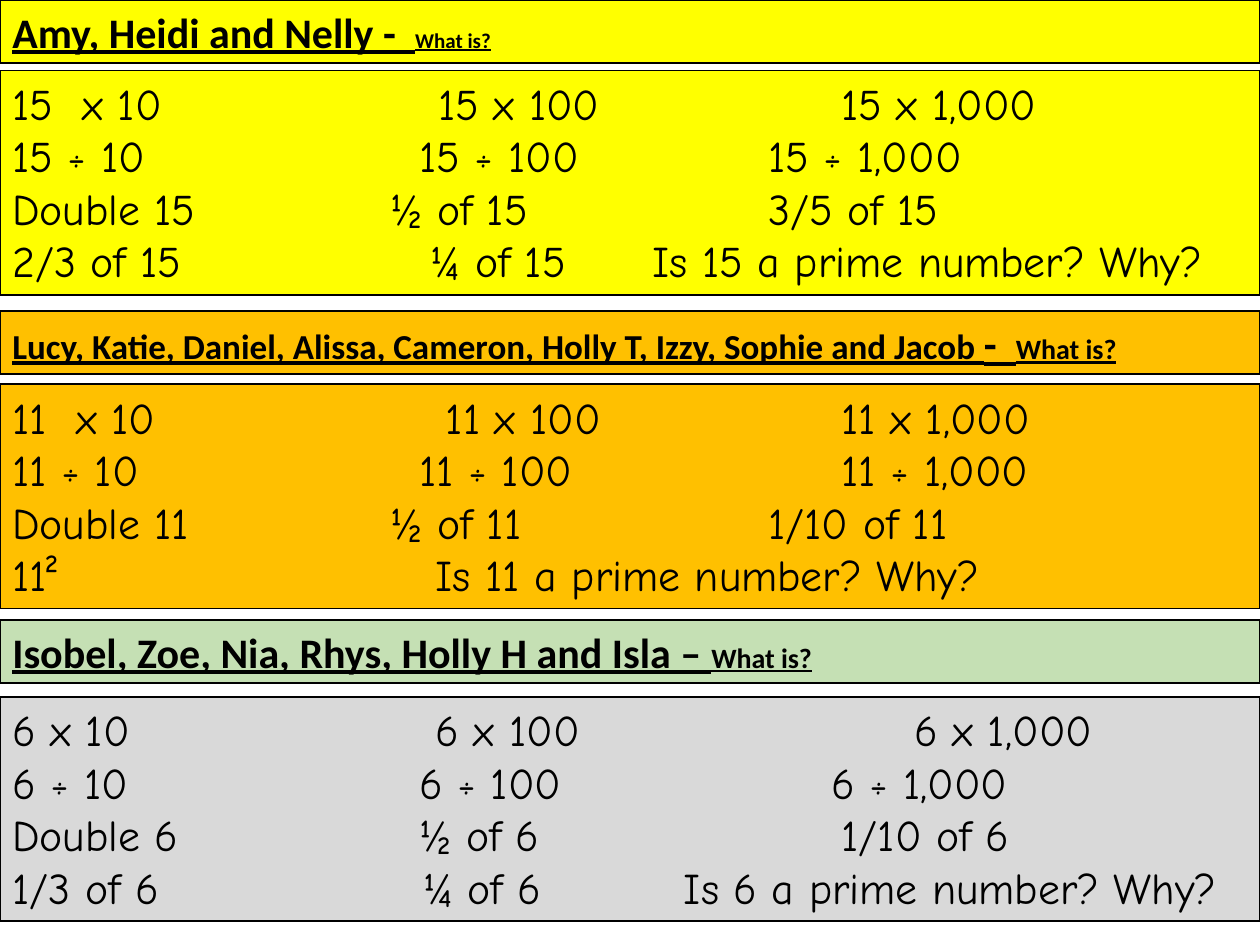
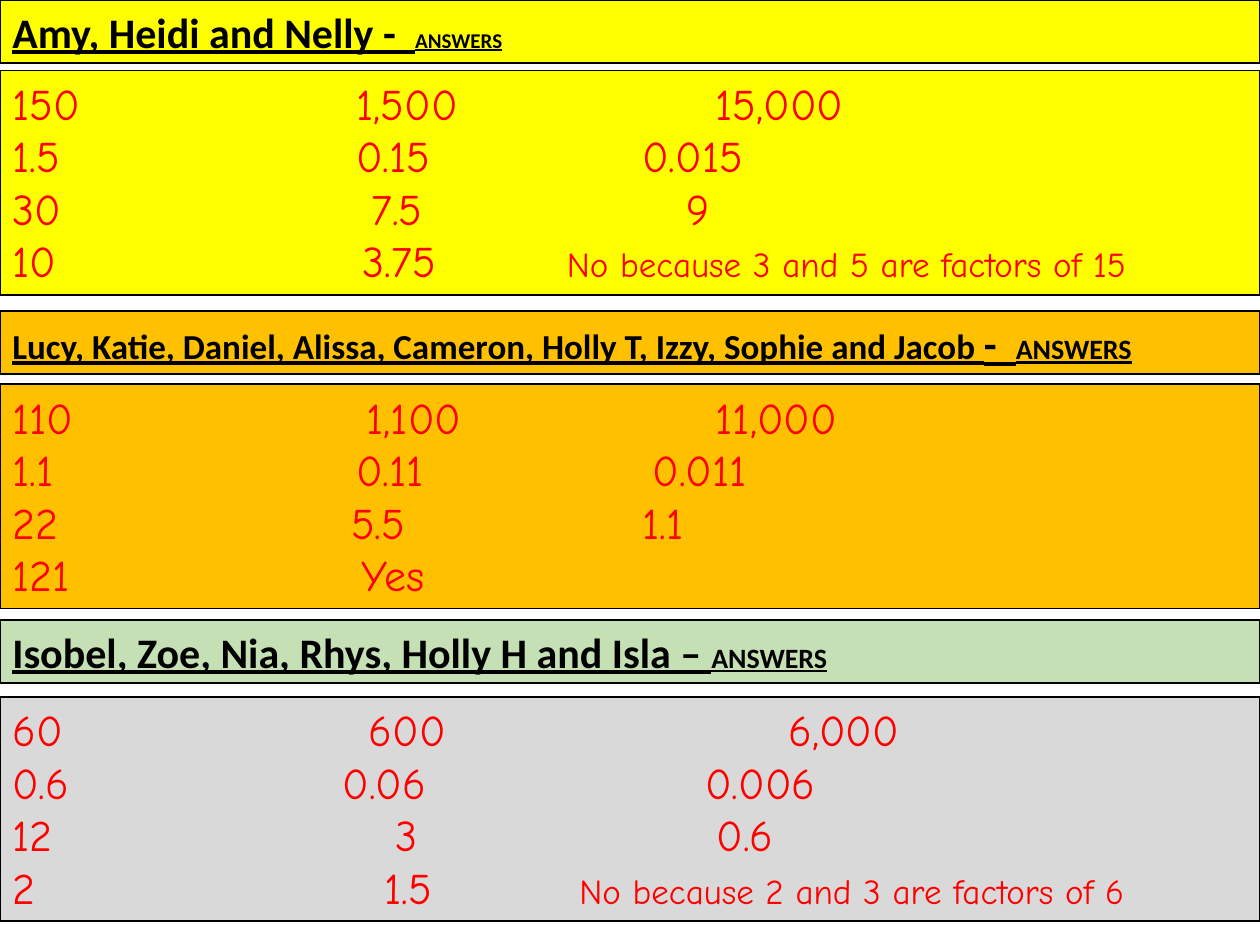
from lxml.etree import SubElement
from pptx import Presentation
from pptx.dml.color import RGBColor
from pptx.enum.shapes import MSO_SHAPE as Shape
from pptx.enum.text import MSO_ANCHOR as Anchor, MSO_AUTO_SIZE as AutoSize, PP_ALIGN as Align
from pptx.oxml.ns import qn
from pptx.util import Inches, Pt

BLACK, RED = "000000", "FF0000"
YELLOW, ORANGE, GREEN, GREY = "FFFF00", "FFC000", "C5E0B4", "D9D9D9"
HEAD_FONT, BODY_FONT = "Calibri", "Comic Neue"
BODY_SIZE, NOTE_SIZE = 25, 20
HEAD_H, BODY_H = 0.5, 1.78

# Each group: heading top, heading fill, heading runs, size of the label, body top, body fill
GROUPS = [
    (0, YELLOW, [("Amy, Heidi and Nelly -  ", 24)], 12, 0.56, YELLOW),
    (2.47, ORANGE,
     [("Lucy, Katie, Daniel, Alissa, Cameron, Holly T, Izzy, Sophie and Jacob ", 20), ("-  ", 24)],
     16, 3.05, ORANGE),
    (4.92, GREEN, [("Isobel, Zoe, Nia, Rhys, Holly H and Isla – ", 24)], 16, 5.53, GREY),
]

# Each row: its first entry, then (tab stop, entry[, size])
QUESTIONS = [
    [
        ["15  x 10", (3.38, "15 x 100"), (6.58, "15 x 1,000")],
        ["15 ÷ 10", (3.23, "15 ÷ 100"), (6, "15 ÷ 1,000")],
        ["Double 15", (3, "½ of 15"), (6, "3/5 of 15")],
        ["2/3 of 15", (3.32, "¼ of 15"), (5.08, "Is 15 a prime number? Why?")],
    ],
    [
        ["11  x 10", (3.44, "11 x 100"), (6.58, "11 x 1,000")],
        ["11 ÷ 10", (3.23, "11 ÷ 100"), (6.58, "11 ÷ 1,000")],
        ["Double 11", (3, "½ of 11"), (6, "1/10 of 11")],
        ["11²", (3.36, "Is 11 a prime number? Why?")],
    ],
    [
        ["6 x 10", (3.36, "6 x 100"), (7.16, "6 x 1,000")],
        ["6 ÷ 10", (3.23, "6 ÷ 100"), (6.5, "6 ÷ 1,000")],
        ["Double 6", (3.23, "½ of 6"), (6.58, "1/10 of 6")],
        ["1/3 of 6", (3.26, "¼ of 6"), (5.33, "Is 6 a prime number? Why?")],
    ],
]
ANSWERS = [
    [
        ["150", (2.73, "1,500"), (5.58, "15,000")],
        ["1.5", (2.73, "0.15"), (5, "0.015")],
        ["30", (2.85, "7.5"), (5.35, "9")],
        ["10", (2.78, "3.75"), (4.4, "No because 3 and 5 are factors of 15", NOTE_SIZE)],
    ],
    [
        ["110", (2.81, "1,100"), (5.58, "11,000")],
        ["1.1", (2.73, "0.11"), (5.08, "0.011")],
        ["22", (2.69, "5.5"), (5, "1.1")],
        ["121", (2.77, "Yes")],
    ],
    [
        ["60", (2.83, "600"), (6.16, "6,000")],
        ["0.6", (2.62, "0.06"), (5.5, "0.006")],
        ["12", (3.04, "3"), (5.59, "0.6")],
        ["2", (2.95, "1.5"), (4.5, "No because 2 and 3 are factors of 6", NOTE_SIZE)],
    ],
]
SLIDES = [("What is?", QUESTIONS, BLACK), ("ANSWERS", ANSWERS, RED)]


def rgb(color):
    return RGBColor.from_string(color)


class Worksheet:
    """Holds the presentation, the current slide and the shared style."""

    def __init__(self):
        self.prs = Presentation()
        self.prs.slide_width, self.prs.slide_height = Inches(10), Inches(7.5)

    def new_slide(self):
        self.s = self.prs.slides.add_slide(self.prs.slide_layouts[6])

    def band(self, top, height, fill):
        """Adds a full-width outlined box and returns its text frame."""
        sp = self.s.shapes.add_shape(
            Shape.RECTANGLE, 0, Inches(top), self.prs.slide_width, Inches(height))
        sp.shadow.inherit = False
        sp.fill.solid()
        sp.fill.fore_color.rgb = rgb(fill)
        sp.line.color.rgb = rgb(BLACK)
        sp.line.width = Pt(1)
        tf = sp.text_frame
        tf.word_wrap = True
        tf.auto_size = AutoSize.SHAPE_TO_FIT_TEXT
        tf.vertical_anchor = Anchor.TOP
        return tf

    def run(self, p, text, size, font, color):
        r = p.add_run()
        r.text = text
        r.font.size, r.font.name = Pt(size), font
        r.font.color.rgb = rgb(color)
        return r

    def tab_stops(self, p, stops):
        tabs = SubElement(p._p.get_or_add_pPr(), qn("a:tabLst"))
        for stop in stops:
            SubElement(tabs, qn("a:tab"), pos=str(Inches(stop)), algn="l")

    def heading(self, top, fill, runs):
        p = self.band(top, HEAD_H, fill).paragraphs[0]
        p.alignment = Align.LEFT
        for text, size in runs:
            r = self.run(p, text, size, HEAD_FONT, BLACK)
            r.font.bold = r.font.underline = True

    def sums(self, top, fill, rows, color):
        tf = self.band(top, BODY_H, fill)
        for i, (first, *others) in enumerate(rows):
            p = tf.add_paragraph() if i else tf.paragraphs[0]
            p.alignment = Align.LEFT
            self.tab_stops(p, [stop for stop, *_ in others])
            self.run(p, first, BODY_SIZE, BODY_FONT, color)
            for _, text, *size in others:
                self.run(p, "\t" + text, size[0] if size else BODY_SIZE, BODY_FONT, color)


def main():
    sheet = Worksheet()
    for label, blocks, color in SLIDES:
        sheet.new_slide()
        for group, rows in zip(GROUPS, blocks):
            head_top, head_fill, names, label_size, body_top, body_fill = group
            sheet.heading(head_top, head_fill, names + [(label, label_size)])
            sheet.sums(body_top, body_fill, rows, color)
    sheet.prs.save("out.pptx")


if __name__ == "__main__":
    main()
